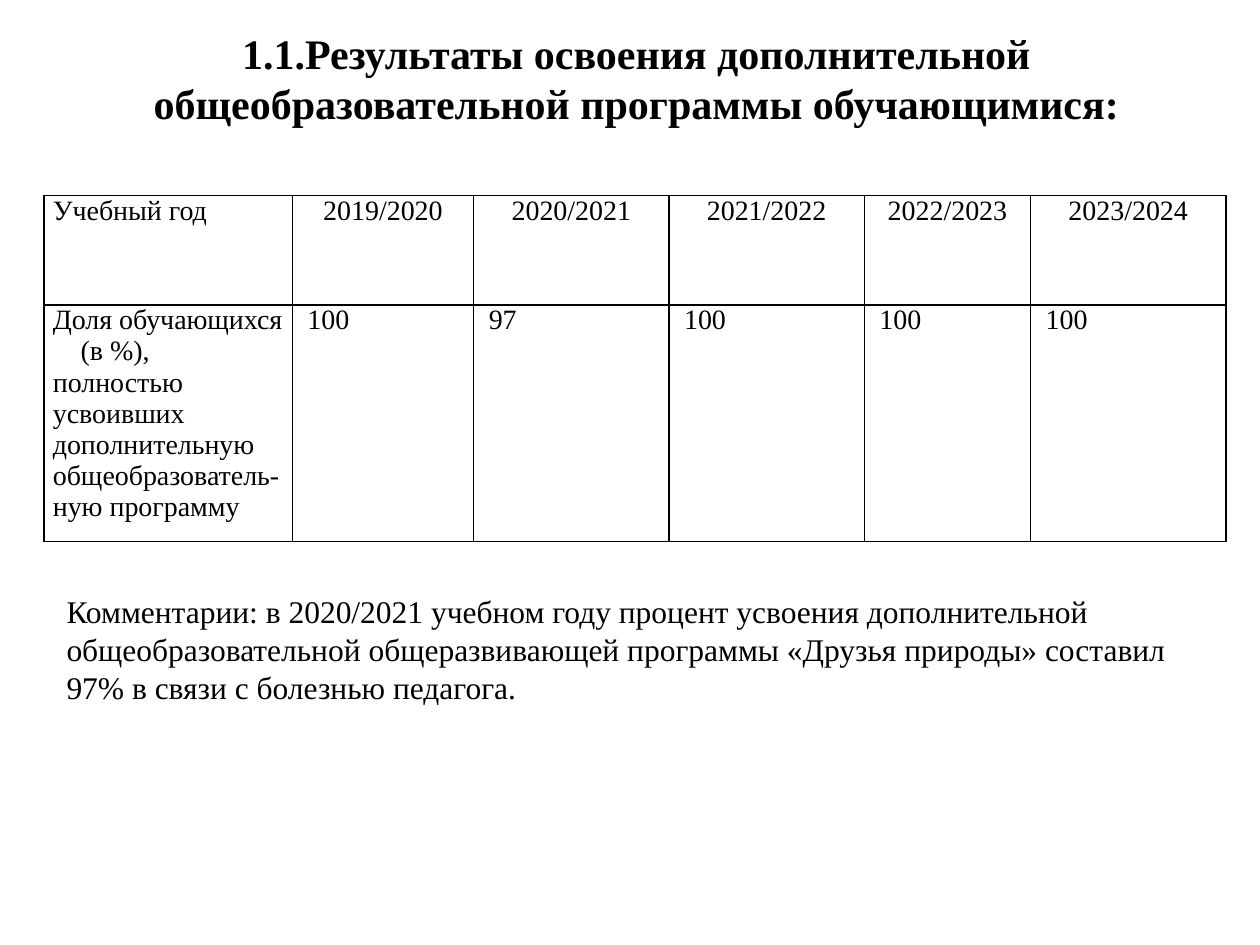
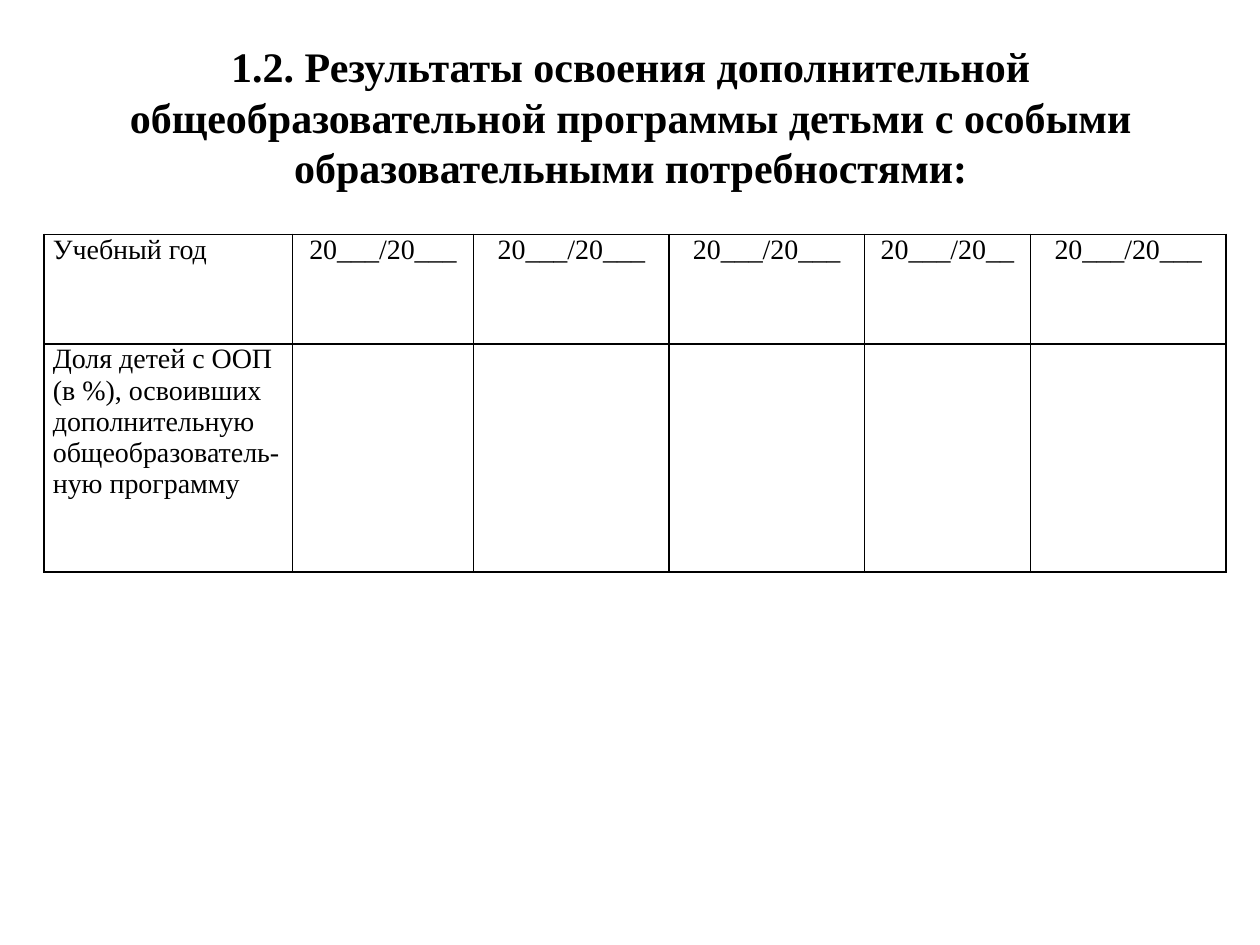
from pptx import Presentation
from pptx.dml.color import RGBColor as Rgb
from pptx.enum.text import MSO_ANCHOR as Anchor, MSO_AUTO_SIZE as Fit, PP_ALIGN as Align
from pptx.oxml import parse_xml
from pptx.oxml.ns import nsdecls
from pptx.util import Inches, Pt

HUES = {"ink": "000000", "paper": "FFFFFF"}
FONT = "Times New Roman"
COLS = [1.97, 1.44, 1.55, 1.55, 1.32, 1.55]
PAD = 0.07
STYLES = {
    "title": {"size": Pt(24), "bold": True},
    "cell": {"size": Pt(16), "bold": False},
    "note": {"size": Pt(18), "bold": False},
}
FRAME = {"word_wrap": True, "auto_size": Fit.NONE}


def apply(item, values):
    for name, value in values.items():
        setattr(item, name, value)


def place(shape, box):
    names = ("left", "top", "width", "height")
    apply(shape, dict(zip(names, map(Inches, box))))


def write(frame, text, style, align=Align.LEFT):
    frame.text = text
    for para in frame.paragraphs:
        para.alignment = align
        apply(para.font, {"name": FONT, **STYLES[style]})
        para.font.color.rgb = Rgb.from_string(HUES["ink"])


def add_title(slide, box, text):
    title = slide.shapes.title
    place(title, box)
    write(title.text_frame, text, "title", Align.CENTER)
    apply(title.text_frame, {**FRAME, "vertical_anchor": Anchor.MIDDLE})


def add_note(slide, box, text):
    note = slide.shapes.add_textbox(*map(Inches, box))
    write(note.text_frame, text, "note")
    apply(note.text_frame, FRAME)


def style_cell(cell, left):
    """Set the margins, black borders and plain fill of a cell."""
    apply(cell, {
        "margin_left": Inches(left), "margin_right": Inches(PAD),
        "margin_top": 0, "margin_bottom": 0,
    })
    props = cell._tc.get_or_add_tcPr()
    for side in ("lnL", "lnR", "lnT", "lnB"):
        props.append(parse_xml(
            f'<a:{side} {nsdecls("a")} w="{Pt(1)}"><a:solidFill>'
            f'<a:srgbClr val="{HUES["ink"]}"/></a:solidFill></a:{side}>'))
    cell.fill.solid()
    cell.fill.fore_color.rgb = Rgb.from_string(HUES["paper"])


def add_grid(slide, left, top, heights, rows):
    """Draw a table with a row of years above a row of shares."""
    box = (left, top, sum(COLS), sum(heights))
    table = slide.shapes.add_table(
        len(rows), len(COLS), *map(Inches, box)).table
    apply(table, {"first_row": False, "horz_banding": False})
    for col, width in zip(table.columns, COLS):
        col.width = Inches(width)
    for r, (height, row) in enumerate(zip(heights, rows)):
        table.rows[r].height = Inches(height)
        for c, text in enumerate(row):
            cell = table.cell(r, c)
            align = Align.CENTER if r == 0 and c else Align.LEFT
            write(cell.text_frame, text, "cell", align)
            style_cell(cell, 0.12 if r and c else PAD)
    return table


def add_results(deck):
    slide = deck.slides.add_slide(deck.slide_layouts[5])
    years = [f"{year}/{year + 1}" for year in range(2019, 2024)]
    label = ("Доля обучающихся\n(в %), полностью усвоивших дополнительную "
             "общеобразователь-ную программу")
    table = add_grid(slide, 0.35, 1.55, (0.87, 1.88), [
        ["Учебный год", *years],
        [label, "100", "97", "100", "100", "100"],
    ])
    second = table.cell(1, 0).text_frame.paragraphs[1]
    second._p.get_or_add_pPr().set("indent", str(Inches(0.22)))
    add_title(slide, (0.2, 0.16, 9.7, 0.91),
              "1.1.Результаты освоения дополнительной "
              "общеобразовательной программы обучающимися:")
    add_note(slide, (0.43, 4.65, 9.37, 1.01),
             "Комментарии: в 2020/2021 учебном году процент усвоения "
             "дополнительной общеобразовательной общеразвивающей программы "
             "«Друзья природы» составил 97% в связи с болезнью педагога.")


def add_needs(deck):
    """Add the slide on children with special educational needs."""
    slide = deck.slides.add_slide(deck.slide_layouts[5])
    add_title(slide, (0.2, 0.3, 9.61, 1.25),
              "1.2. Результаты освоения дополнительной "
              "общеобразовательной программы детьми с особыми "
              "образовательными потребностями:")
    blank = "20___/20___"
    label = ("Доля детей с ООП (в %), освоивших дополнительную "
             "общеобразователь-ную программу")
    add_grid(slide, 0.35, 1.86, (0.87, 1.81), [
        ["Учебный год", blank, blank, blank, "20___/20__", blank],
        [label] + [""] * 5,
    ])


def main():
    deck = Presentation()
    apply(deck, {"slide_width": Inches(10), "slide_height": Inches(7.5)})
    add_results(deck)
    add_needs(deck)
    deck.save("out.pptx")


if __name__ == "__main__":
    main()
